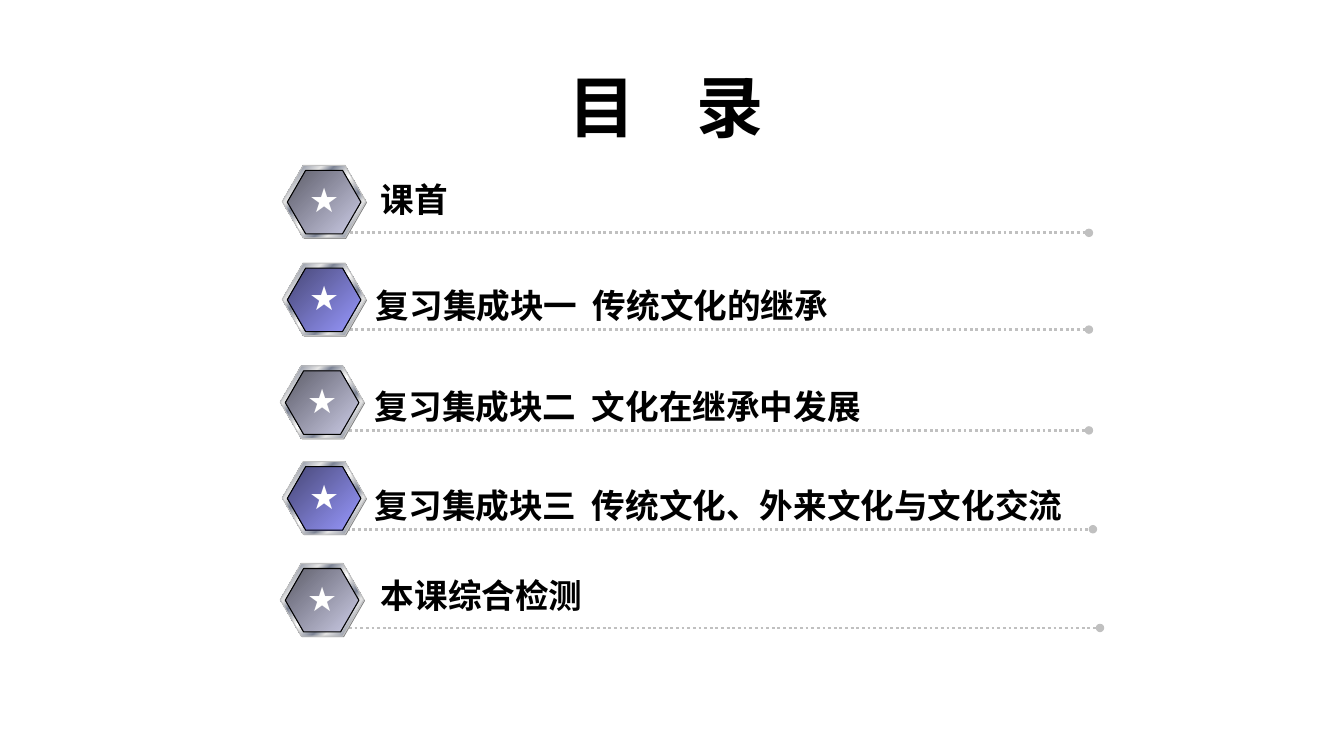
from lxml import etree
from pptx import Presentation
from pptx.dml.color import RGBColor
from pptx.enum.dml import MSO_LINE
from pptx.enum.shapes import MSO_CONNECTOR, MSO_SHAPE
from pptx.enum.text import MSO_ANCHOR, PP_ALIGN
from pptx.oxml.ns import qn
from pptx.util import Inches, Pt

HEXAGON = MSO_SHAPE.HEXAGON
STRAIGHT = MSO_CONNECTOR.STRAIGHT
DOTTED = MSO_LINE.ROUND_DOT
LEFT, CENTER = PP_ALIGN.LEFT, PP_ALIGN.CENTER
TOP, MIDDLE = MSO_ANCHOR.TOP, MSO_ANCHOR.MIDDLE

# Content
TITLE = "目    录"
# text, text (left, top, width), badge (left, top), badge style, rule (start, end, y)
ENTRIES = [
    ("课首", (3.68, 1.73, 5.67), (2.8, 1.64), "gray", (3.47, 10.8, 2.31)),
    ("复习集成块一  传统文化的继承", (3.63, 2.78, 5.67), (2.8, 2.61), "violet", (3.47, 10.8, 3.27)),
    ("复习集成块二  文化在继承中发展", (3.62, 3.78, 5.75), (2.78, 3.63), "gray", (3.24, 10.8, 4.27)),
    ("复习集成块三  传统文化、外来文化与文化交流", (3.62, 4.76, 7.45), (2.8, 4.58), "violet", (3.44, 10.84, 5.25)),
    ("本课综合检测", (3.68, 5.65, 5.31), (2.78, 5.59), "gray", (3.35, 10.91, 6.23)),
]
STAR = "★"

COLORS = {
    "text": "000000", "star": "FFFFFF", "rule": "C0C0C0", "shade": "808080",
    "light": "E6E6E6", "steel": "7D8496", "shine": "FFFFFF", "edge": "000000",
    "gray_dark": "5E5E6A", "gray_light": "CCCCE6",
    "violet_dark": "474776", "violet_light": "9999FF",
}
METAL = [(0, "light"), (8, "steel"), (26, "light"), (34, "steel"), (46, "light"), (50, "shine"),
         (54, "light"), (66, "steel"), (74, "light"), (92, "steel"), (100, "light")]
CJK_FONT, STAR_FONT = "Noto Sans CJK JP", "Arial"
RIM_SIZE, FACE_SIZE = (0.83, 0.72), (0.73, 0.63)

prs = Presentation()
prs.slide_width, prs.slide_height = Inches(13.33), Inches(7.5)
slide = prs.slides.add_slide(prs.slide_layouts[6])


def rgb(name):
    return RGBColor.from_string(COLORS[name])


def add_text(text, left, top, width, height=0.5, size=24, font=CJK_FONT, color="text",
             align=LEFT, anchor=TOP, wrap=True):
    frame = slide.shapes.add_textbox(*map(Inches, (left, top, width, height))).text_frame
    frame.word_wrap = wrap
    frame.vertical_anchor = anchor
    paragraph = frame.paragraphs[0]
    paragraph.alignment = align
    run = paragraph.add_run()
    run.text = text
    run.font.size, run.font.bold, run.font.name = Pt(size), True, font
    run.font.color.rgb = rgb(color)
    east_asian = etree.Element(qn("a:ea"), typeface=font)
    run.font._element.find(qn("a:latin")).addnext(east_asian)


def add_hexagon(group, left, top, size, stops, line=None):
    hexagon = group.shapes.add_shape(HEXAGON, *map(Inches, (left, top, *size)))
    hexagon.shadow.inherit = False
    hexagon.adjustments[0] = 0.289
    if len(stops) == 1:
        hexagon.fill.solid()
        hexagon.fill.fore_color.rgb = rgb(stops[0][1])
    else:
        hexagon.fill.gradient()
        hexagon.fill.gradient_angle = 315  # counter-clockwise: runs to the lower right
        stop_list = hexagon._element.spPr.find(".//" + qn("a:gsLst"))
        for stop in list(stop_list):
            stop_list.remove(stop)
        for percent, color in stops:
            stop = etree.SubElement(stop_list, qn("a:gs"), pos=str(percent * 1000))
            etree.SubElement(stop, qn("a:srgbClr"), val=COLORS[color])
    if line:
        hexagon.line.color.rgb = rgb(line)
        hexagon.line.width = Pt(0.75)
    else:
        hexagon.line.fill.background()


def add_badge(left, top, style):
    badge = slide.shapes.add_group_shape()
    add_hexagon(badge, left + 0.01, top + 0.01, RIM_SIZE, [(0, "shade")])
    add_hexagon(badge, left, top, RIM_SIZE, METAL, "rule")
    face = [(0, style + "_dark"), (100, style + "_light")]
    add_hexagon(badge, left + 0.05, top + 0.05, FACE_SIZE, face, "edge")
    add_text(STAR, left + 0.15, top + 0.09, 0.53, font=STAR_FONT, color="star",
             align=CENTER, wrap=False)


def add_rule(start, end, y):
    rule = slide.shapes.add_connector(STRAIGHT, *map(Inches, (start, y, end, y)))
    rule.line.color.rgb = rgb("rule")
    rule.line.width = Pt(2)
    rule.line.dash_style = DOTTED
    etree.SubElement(rule.line._get_or_add_ln(), qn("a:tailEnd"), type="oval")
    etree.SubElement(rule._element.spPr, qn("a:effectLst"))


# Title
add_text(TITLE, 2.02, 0.52, 9.17, 1.05, size=48, align=CENTER, anchor=MIDDLE)

# Entries: dotted rule, badge with star, text
for text, text_place, badge_place, style, rule_place in ENTRIES:
    add_rule(*rule_place)
    add_badge(*badge_place, style)
    add_text(text, *text_place)

prs.save("out.pptx")
